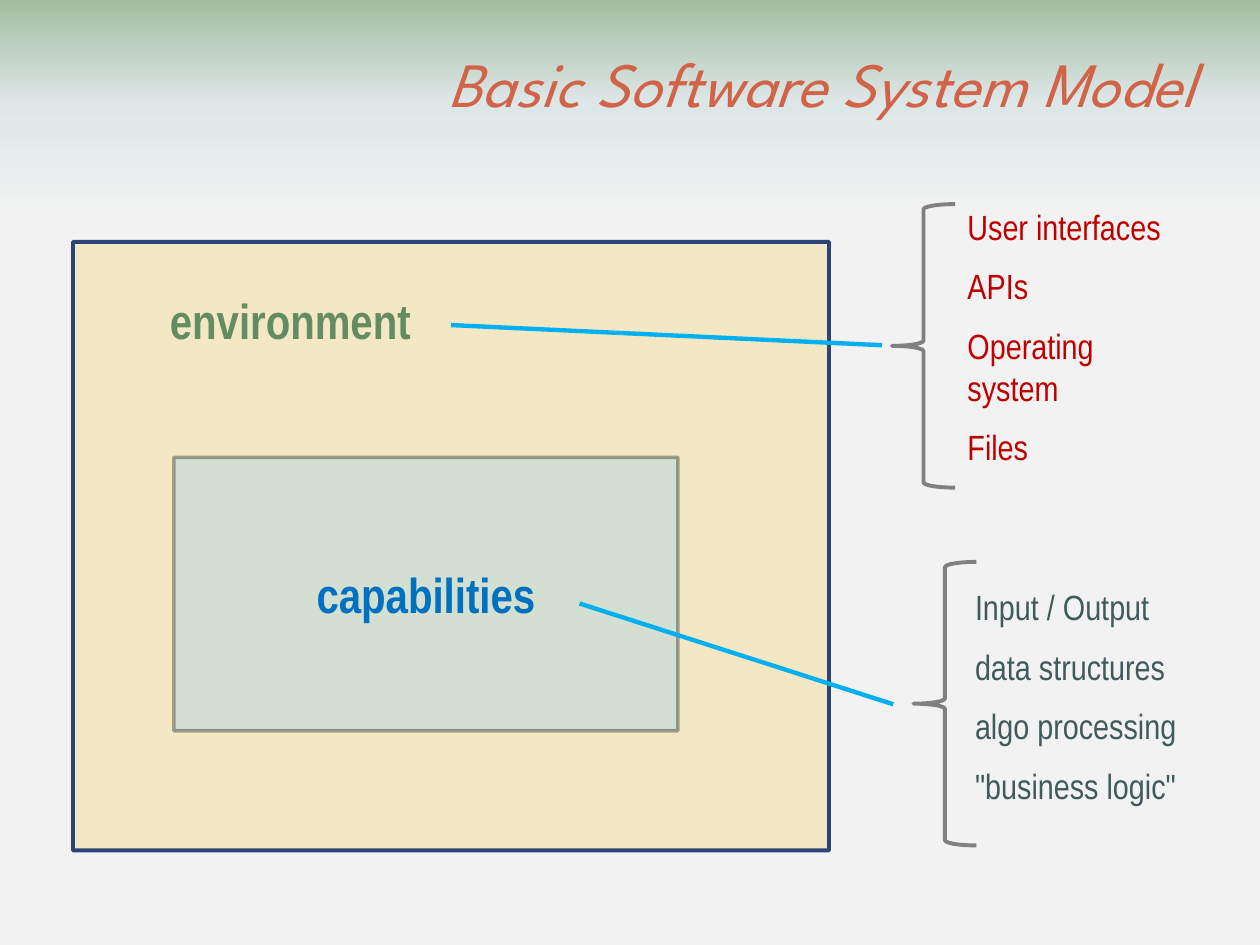
import pptx
import pptx.util
import pptx.oxml
import pptx.oxml.ns
from pptx.dml.color import RGBColor
from pptx.enum.shapes import MSO_CONNECTOR, MSO_SHAPE
from pptx.enum.text import MSO_ANCHOR, MSO_AUTO_SIZE, PP_ALIGN
from pptx.util import Inches
from lxml import etree

HUES = {
    "title": "D16349", "env": "648C61", "cap": "0070C0",
    "outer": "FFC000", "navy": "002060", "inner": "D2DFD1", "black": "000000",
    "red": "C00000", "slate": "415B5C", "link": "00B0F0", "brace": "808080",
    "base": "F2F2F2", "mist": "DEE7E8", "green": "A2BDA0",
}
SANS = "Arial Narrow"


def write(frame, lines, hue, fmt, **para):
    """Fill a text frame with one paragraph per line, all formatted alike."""
    for i, line in enumerate(lines):
        p = frame.paragraphs[0] if i == 0 else frame.add_paragraph()
        for key, val in para.items():
            setattr(p, key, val)
        run = p.add_run()
        run.text = line
        for key, val in fmt.items():
            setattr(run.font, key, val)
        run.font.color.rgb = RGBColor.from_string(HUES[hue])


def paint(color, hue, alpha=100):
    """Set a solid colour, with its opacity in percent."""
    color.rgb = RGBColor.from_string(HUES[hue])
    if alpha < 100:
        node = color._xFill.find(pptx.oxml.ns.qn("a:srgbClr"))
        etree.SubElement(node, pptx.oxml.ns.qn("a:alpha"), val=str(alpha * 1000))


deck = pptx.Presentation()
deck.slide_width, deck.slide_height = Inches(10), Inches(7.5)
slide = deck.slides.add_slide(deck.slide_layouts[5])
shapes = slide.shapes

# Background: green at the top edge, fading to light grey
stops = "".join(
    f'<a:gs pos="{pos * 1000}"><a:srgbClr val="{HUES[hue]}"/></a:gs>'
    for pos, hue in [(77, "base"), (89, "mist"), (100, "green")])
fill = slide.background.fill
fill.gradient()
grad = slide._element.find(".//" + pptx.oxml.ns.qn("a:gradFill"))
grad.getparent().replace(grad, pptx.oxml.parse_xml(
    f'<a:gradFill {pptx.oxml.ns.nsdecls("a")} rotWithShape="1"><a:gsLst>{stops}</a:gsLst>'
    '<a:lin ang="16200000" scaled="0"/></a:gradFill>'))

# Title
title = shapes.title
title.left, title.top, title.width, title.height = map(Inches, (0.42, 0.25, 9.17, 0.75))
frame = title.text_frame
frame.auto_size = MSO_AUTO_SIZE.NONE
frame.vertical_anchor = MSO_ANCHOR.BOTTOM
write(frame, ["Basic Software System Model"], "title",
      {"name": "League Spartan", "size": pptx.util.Pt(36), "italic": True},
      alignment=PP_ALIGN.RIGHT)

# Nested boxes: box, fill, fill opacity, line, line opacity, line width
boxes = [
    ((0.58, 1.92, 6, 4.83), "outer", 19, "navy", 81, 2.25),
    ((1.38, 3.63, 4, 2.17), "inner", 100, "black", 33, 2),
]
for box, hue, solid, edge, clear, width in boxes:
    rect = shapes.add_shape(MSO_SHAPE.FLOWCHART_PROCESS, *map(Inches, box))
    rect.shadow.inherit = False
    rect.fill.solid()
    paint(rect.fill.fore_color, hue, solid)
    rect.line.fill.solid()
    paint(rect.line.fill.fore_color, edge, clear)
    rect.line.width = pptx.util.Pt(width)

# Box labels
label = {"name": SANS, "size": pptx.util.Pt(28), "bold": True}
frame = rect.text_frame
frame.word_wrap = False
frame.vertical_anchor = MSO_ANCHOR.MIDDLE
write(frame, ["capabilities"], "cap", label, alignment=PP_ALIGN.CENTER)
frame = shapes.add_textbox(*map(Inches, (1.25, 2.26, 2.13, 0.57))).text_frame
frame.word_wrap = False
write(frame, ["environment"], "env", label)

# Lists of examples
lists = [
    ((7.58, 1.58, 1.92, 2.29), "red",
     ["User interfaces", "APIs", "Operating system", "Files"]),
    ((7.64, 4.6, 2, 1.95), "slate",
     ["Input / Output", "data structures", "algo processing", '"business logic"']),
]
for box, hue, lines in lists:
    frame = shapes.add_textbox(*map(Inches, box)).text_frame
    frame.word_wrap = True
    write(frame, lines, hue, {"name": SANS, "size": pptx.util.Pt(20)},
          space_before=pptx.util.Pt(10))

# Lines from each label to its list
for ends in [(3.58, 2.58, 7, 2.74), (4.6, 4.79, 7.09, 5.59)]:
    link = shapes.add_connector(MSO_CONNECTOR.STRAIGHT, *map(Inches, ends))
    paint(link.line.color, "link")
    link.line.width = pptx.util.Pt(2.5)
    etree.SubElement(link._element.spPr, pptx.oxml.ns.qn("a:effectLst"))

# Braces around the lists
for left, top in [(7.08, 1.62), (7.25, 4.46)]:
    brace = shapes.add_shape(MSO_SHAPE.LEFT_BRACE, *map(Inches, (left, top, 0.5, 2.25)))
    brace.shadow.inherit = False
    brace.fill.background()
    paint(brace.line.color, "brace")
    brace.line.width = pptx.util.Pt(2.25)

deck.save("out.pptx")
